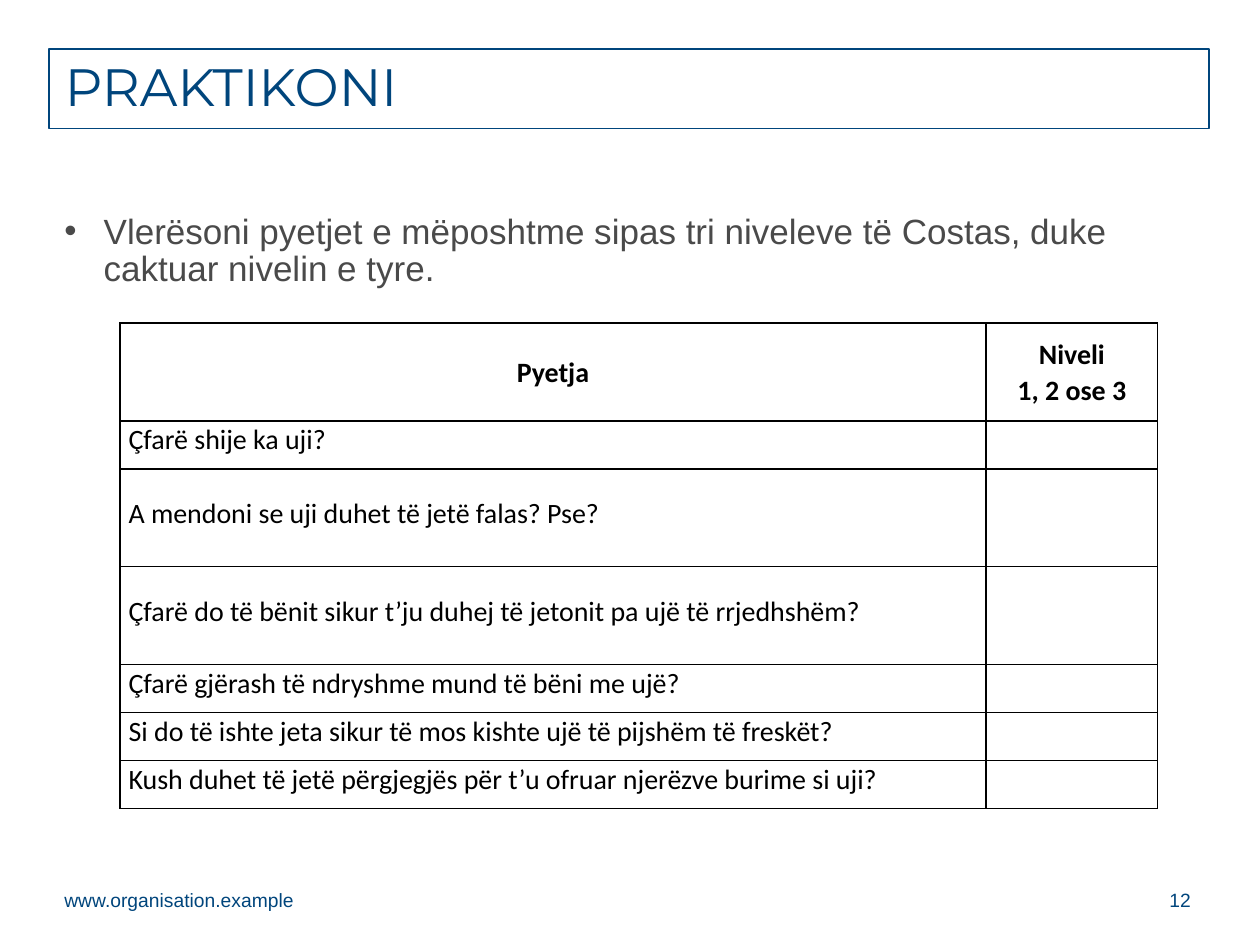
from pptx import Presentation
from pptx.util import Pt
from pptx.dml.color import RGBColor as RGB
from pptx.enum.shapes import MSO_SHAPE as SHAPE
from pptx.enum.text import MSO_ANCHOR as ANCHOR, PP_ALIGN as ALIGN
from lxml.etree import SubElement
from pptx.oxml import parse_xml
from pptx.oxml.ns import nsdecls, qn

C = {"navy": "00457C", "gray": "4A4A4A", "black": "000000", "white": "FFFFFF"}


def write(tf, text, font="Arial", size=11, color="navy", bold=False,
          align=ALIGN.LEFT, spacing=None, anchor=ANCHOR.TOP, margins=(0, 0, 0, 0)):
    tf.word_wrap = True
    tf.vertical_anchor = anchor
    tf.margin_left, tf.margin_top, tf.margin_right, tf.margin_bottom = map(Pt, margins)
    for i, line in enumerate(text.split("\n")):
        p = tf.add_paragraph() if i else tf.paragraphs[0]
        p.alignment = align
        p.line_spacing = spacing
        r = p.add_run()
        r.text = line
        r.font.name, r.font.size, r.font.bold = font, Pt(size), bold
        r.font.color.rgb = RGB.from_string(C[color])


def fill_cell(cell, text, top=0, **fmt):
    cell.fill.solid()
    cell.fill.fore_color.rgb = RGB.from_string(C["white"])
    cell.margin_left = cell.margin_right = Pt(5)
    cell.margin_top, cell.margin_bottom = Pt(top), Pt(0)
    cell.vertical_anchor = fmt.get("anchor", ANCHOR.TOP)
    if text:
        write(cell.text_frame, text, "Calibri", 16, "black", spacing=1.07,
              margins=(5, top, 5, 0), **fmt)
    tc_pr = cell._tc.get_or_add_tcPr()
    for i, side in enumerate(("lnL", "lnR", "lnT", "lnB")):
        tc_pr.insert(i, parse_xml(
            f'<a:{side} {nsdecls("a")} w="12700"><a:solidFill>'
            f'<a:srgbClr val="{C["black"]}"/></a:solidFill></a:{side}>'))


prs = Presentation()
prs.slide_width, prs.slide_height = Pt(720), Pt(540)
s = prs.slides.add_slide(prs.slide_layouts[6])

sp = s.shapes.add_shape(SHAPE.RECTANGLE, Pt(28), Pt(28), Pt(663), Pt(45.5))
sp.shadow.inherit = False
sp.fill.background()
sp.line.color.rgb = RGB.from_string(C["navy"])
sp.line.width = Pt(1)
write(sp.text_frame, "PRAKTIKONI", "Montserrat", 30, spacing=Pt(30), margins=(9, 9, 9, 6))

sp = s.shapes.add_textbox(Pt(36.75), Pt(123), Pt(646.5), Pt(360))
write(sp.text_frame, "Vlerësoni pyetjet e mëposhtme sipas tri niveleve të Costas, "
      "duke caktuar nivelin e tyre.", size=20, color="gray", spacing=Pt(21))
p = sp.text_frame.paragraphs[0]
p.space_after = Pt(10.5)
p_pr = p._p.get_or_add_pPr()
p_pr.set("marL", str(Pt(22.5)))
p_pr.set("indent", str(-Pt(22.5)))
SubElement(p_pr, qn("a:buFont"), typeface="Arial")
SubElement(p_pr, qn("a:buChar"), char="•")

questions = [
    ("Çfarë shije ka uji?", False),
    ("A mendoni se uji duhet të jetë falas? Pse?", True),
    ("Çfarë do të bënit sikur t’ju duhej të jetonit pa ujë të rrjedhshëm?", True),
    ("Çfarë gjërash të ndryshme mund të bëni me ujë?", False),
    ("Si do të ishte jeta sikur të mos kishte ujë të pijshëm të freskët?", False),
    ("Kush duhet të jetë përgjegjës për t’u ofruar njerëzve burime si uji?", False),
]
tall, short = Pt(56), Pt(27.4)
table = s.shapes.add_table(len(questions) + 1, 2, Pt(68.5), Pt(184.5),
                           Pt(593), Pt(277)).table
table.columns[0].width, table.columns[1].width = Pt(495), Pt(98)
table.rows[0].height = tall
for col, heading in enumerate(("Pyetja", "Niveli\n1, 2 ose 3")):
    fill_cell(table.cell(0, col), heading, bold=True, align=ALIGN.CENTER,
              anchor=ANCHOR.MIDDLE)
for row, (question, is_tall) in enumerate(questions, 1):
    table.rows[row].height = tall if is_tall else short
    fill_cell(table.cell(row, 0), question, top=14.4 if is_tall else 0)
    fill_cell(table.cell(row, 1), "")

for text, left, width, align in (("www.organisation.example", 36.75, 300, ALIGN.LEFT),
                                 ("12", 518.5, 162, ALIGN.RIGHT)):
    sp = s.shapes.add_textbox(Pt(left), Pt(498.5), Pt(width), Pt(31))
    write(sp.text_frame, text, align=align, anchor=ANCHOR.MIDDLE)

prs.save("out.pptx")
